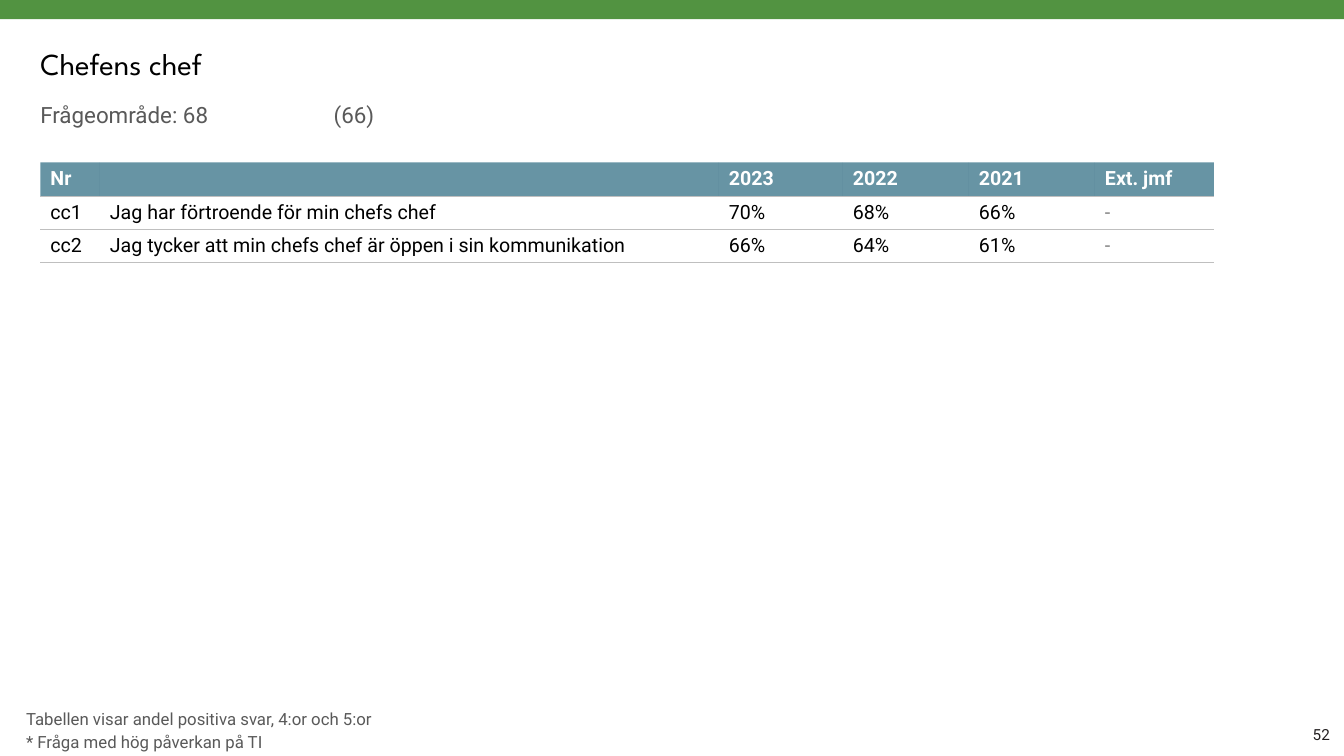
import pptx
import pptx.dml.color
import pptx.enum.shapes
import pptx.enum.text
import pptx.oxml
import pptx.oxml.ns
import pptx.util
from pptx.util import Inches

TITLE = "Chefens chef"
AREA_SCORES = [["Frågeområde: 68", "(66)"]]
AREA_WIDTHS = [2.91, 2.34]
QUESTIONS = [
    ["Nr", "", "2023", "2022", "2021", "Ext. jmf"],
    ["cc1", "Jag har förtroende för min chefs chef", "70%", "68%", "66%", "-"],
    ["cc2", "Jag tycker att min chefs chef är öppen i sin kommunikation",
     "66%", "64%", "61%", "-"],
]
QUESTION_WIDTHS = [0.59, 6.14, 1.23, 1.25, 1.25, 1.18]
FOOTNOTES = [
    "Tabellen visar andel positiva svar, 4:or och 5:or",
    "* Fråga med hög påverkan på TI",
]
PAGE_NUMBER = "52"
COLORS = {
    "bar": "529341", "header": "427A8E", "rule": "BFBFBF", "white": "FFFFFF",
    "black": "000000", "gray": "595959", "dash": "808080", "page": "231F20",
}
ANCHOR = pptx.enum.text.MSO_ANCHOR
ALIGN = pptx.enum.text.PP_ALIGN


def rgb(name):
    return pptx.dml.color.RGBColor.from_string(COLORS[name])


def write(frame, lines, size, color, font="Roboto", bold=False,
          align=ALIGN.LEFT, space=0):
    for index, line in enumerate(lines):
        paragraph = frame.paragraphs[0] if index == 0 else frame.add_paragraph()
        paragraph.alignment = align
        if index:
            paragraph.space_before = pptx.util.Pt(space)
        if not line:
            end = paragraph._p.get_or_add_endParaRPr()
            end.set("sz", str(size * 100))
            continue
        run = paragraph.add_run()
        run.text = line
        run.font.name = font
        run.font.size = pptx.util.Pt(size)
        run.font.bold = bold
        run.font.color.rgb = rgb(color)


def clear_margins(target):
    target.margin_left = target.margin_right = 0
    target.margin_top = target.margin_bottom = 0


def set_borders(cell, ruled_sides):
    properties = cell._tc.get_or_add_tcPr()
    for side in "LRTB":
        if side in ruled_sides:
            paint = f'<a:solidFill><a:srgbClr val="{COLORS["rule"]}"/></a:solidFill>'
        else:
            paint = "<a:noFill/>"
        properties.append(pptx.oxml.parse_xml(
            f'<a:ln{side} {pptx.oxml.ns.nsdecls("a")} w="12700">{paint}</a:ln{side}>'))


def add_plain_table(slide, rows, widths, left, top, row_height):
    shape = slide.shapes.add_table(
        len(rows), len(widths), Inches(left), Inches(top),
        Inches(sum(widths)), Inches(row_height * len(rows)))
    table = shape.table
    table.first_row = table.horz_banding = False
    for column, width in zip(table.columns, widths):
        column.width = Inches(width)
    for row in table.rows:
        row.height = Inches(row_height)
    for cell in table.iter_cells():
        cell.vertical_anchor = ANCHOR.MIDDLE
    return table


def add_text(slide, left, top, width, height, lines, **style):
    box = slide.shapes.add_textbox(
        Inches(left), Inches(top), Inches(width), Inches(height))
    box.text_frame.word_wrap = True
    write(box.text_frame, lines, **style)
    return box


def main():
    presentation = pptx.Presentation()
    presentation.slide_width = Inches(13.33)
    presentation.slide_height = Inches(7.5)
    slide = presentation.slides.add_slide(presentation.slide_layouts[5])

    bar = slide.shapes.add_shape(
        pptx.enum.shapes.MSO_SHAPE.RECTANGLE,
        0, 0, presentation.slide_width, Inches(0.19))
    bar.shadow.inherit = False
    bar.fill.solid()
    bar.fill.fore_color.rgb = rgb("bar")
    bar.line.fill.background()

    title = slide.shapes.title
    title.left, title.top = Inches(0.4), Inches(0.44)
    title.width, title.height = Inches(7.96), Inches(0.37)
    clear_margins(title.text_frame)
    title.text_frame.vertical_anchor = ANCHOR.MIDDLE
    title.text_frame.auto_size = pptx.enum.text.MSO_AUTO_SIZE.NONE
    write(title.text_frame, [TITLE], 21.8, "black", font="League Spartan")

    area = add_plain_table(slide, AREA_SCORES, AREA_WIDTHS, 0.4, 0.8, 0.7)
    for cell, text in zip(area.iter_cells(), AREA_SCORES[0]):
        clear_margins(cell)
        set_borders(cell, "")
        cell.fill.background()
        write(cell.text_frame, [text], 16, "gray")

    table = add_plain_table(slide, QUESTIONS, QUESTION_WIDTHS, 0.4, 1.61, 0.33)
    for row_index, row in enumerate(QUESTIONS):
        is_header = row_index == 0
        for column_index, text in enumerate(row):
            cell = table.cell(row_index, column_index)
            set_borders(cell, "B" if is_header else "TB")
            if is_header:
                cell.fill.solid()
                cell.fill.fore_color.rgb = rgb("header")
                color = cell._tc.tcPr.find(".//" + pptx.oxml.ns.qn("a:solidFill")
                                           + "/" + pptx.oxml.ns.qn("a:srgbClr")
                                           + f"[@val='{COLORS['header']}']")
                color.append(pptx.oxml.parse_xml(
                    f'<a:alpha {pptx.oxml.ns.nsdecls("a")} val="80000"/>'))
            else:
                cell.fill.background()
            text_color = "white" if is_header else "dash" if text == "-" else "black"
            write(cell.text_frame, [text], 14, text_color, bold=is_header)

    add_text(slide, 0.16, 6.98, 5.4, 0.55, FOOTNOTES,
             size=12, color="gray", space=2.4)
    page = add_text(slide, 12.49, 7.19, 0.7, 0.18, [PAGE_NUMBER],
                    size=10.9, color="page", align=ALIGN.RIGHT)
    clear_margins(page.text_frame)

    presentation.save("out.pptx")


if __name__ == "__main__":
    main()
